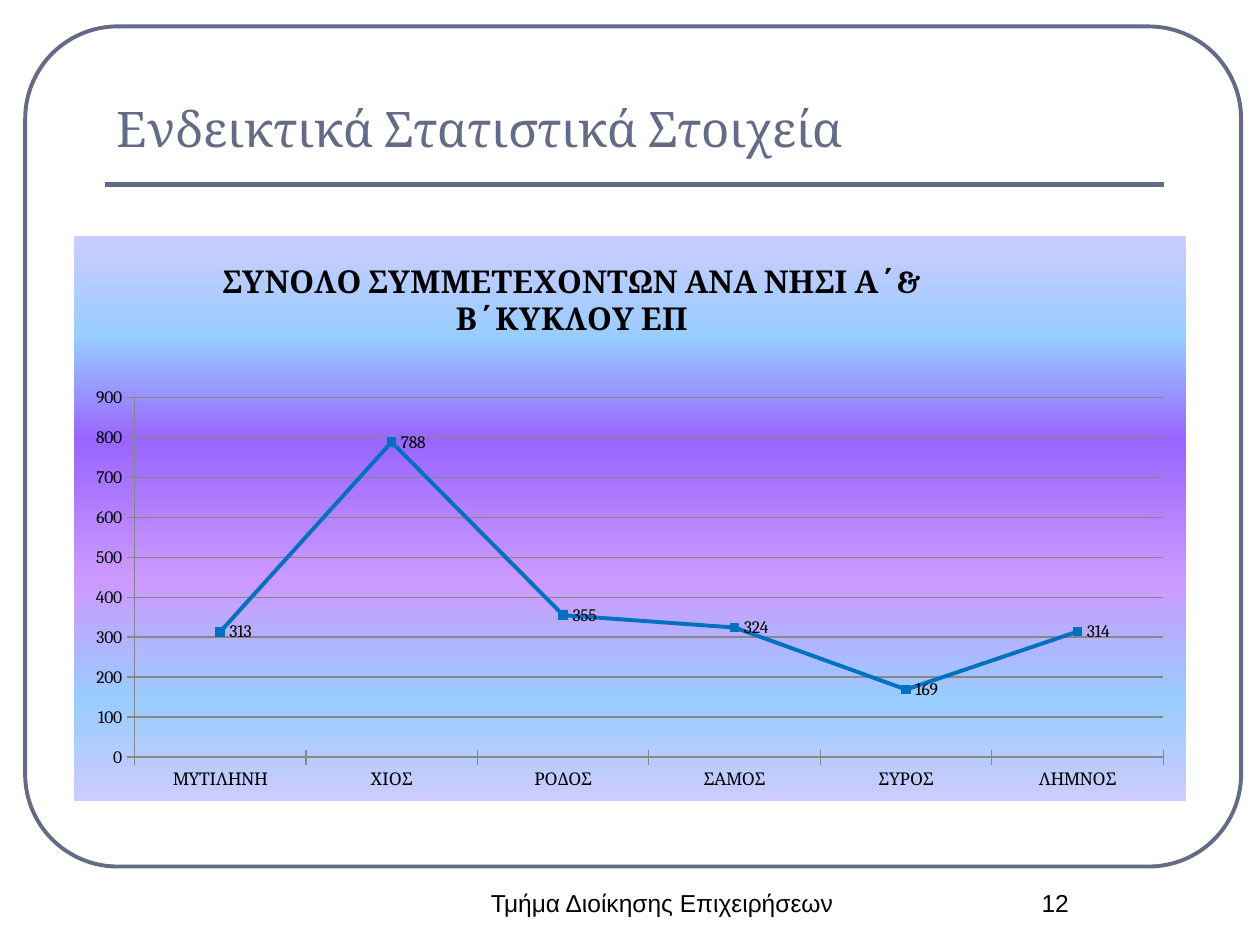
from dataclasses import dataclass

from pptx import Presentation
from pptx.chart.data import CategoryChartData
from pptx.dml.color import RGBColor
from pptx.enum.chart import XL_CHART_TYPE, XL_LABEL_POSITION, XL_MARKER_STYLE, XL_TICK_MARK
from pptx.enum.shapes import MSO_CONNECTOR, MSO_SHAPE
from pptx.enum.text import MSO_ANCHOR, PP_ALIGN
from pptx.oxml import parse_xml
from pptx.oxml.ns import nsdecls, qn
from pptx.util import Inches, Pt

WIDTH = Inches(10)
HEIGHT = Inches(7.5)


@dataclass(frozen=True)
class Theme:
    accent: RGBColor = RGBColor(0x64, 0x6B, 0x86)
    text: RGBColor = RGBColor(0, 0, 0)
    series: RGBColor = RGBColor(0x00, 0x70, 0xC0)
    grid: RGBColor = RGBColor(0x87, 0x87, 0x87)
    gradient: tuple = (
        (0, "CCCCFF"), (18, "99CCFF"), (36, "9966FF"),
        (61, "CC99FF"), (82, "99CCFF"), (100, "CCCCFF"),
    )
    heading_font: str = "Cambria"
    footer_font: str = "Arial"
    heading_size: Pt = Pt(28)
    chart_title_size: Pt = Pt(18)
    footer_size: Pt = Pt(14)
    chart_size: Pt = Pt(10)


THEME = Theme()
ISLANDS = {
    "ΜΥΤΙΛΗΝΗ": 313, "ΧΙΟΣ": 788, "ΡΟΔΟΣ": 355,
    "ΣΑΜΟΣ": 324, "ΣΥΡΟΣ": 169, "ΛΗΜΝΟΣ": 314,
}
CHART_TITLE = ("ΣΥΝΟΛΟ ΣΥΜΜΕΤΕΧΟΝΤΩΝ ΑΝΑ ΝΗΣΙ Α΄&", "Β΄ΚΥΚΛΟΥ ΕΠ")


def share_box(left, top, width, height):
    return (
        round(WIDTH * left / 100), round(HEIGHT * top / 100),
        round(WIDTH * width / 100), round(HEIGHT * height / 100),
    )


def style_font(font, name, size, color, bold=False):
    font.name = name
    font.size = size
    font.bold = bold
    font.color.rgb = color


def add_text(slide, box, text, name, size, color, alignment, anchor):
    frame = slide.shapes.add_textbox(*box).text_frame
    frame.word_wrap = True
    frame.vertical_anchor = anchor
    paragraph = frame.paragraphs[0]
    paragraph.alignment = alignment
    run = paragraph.add_run()
    run.text = text
    style_font(run.font, name, size, color)


def add_frame(slide, box):
    shape = slide.shapes.add_shape(MSO_SHAPE.ROUNDED_RECTANGLE, *box)
    shape.adjustments[0] = 0.11
    shape.shadow.inherit = False
    shape.fill.background()
    shape.line.color.rgb = THEME.accent
    shape.line.width = Pt(2.25)


def add_heading(slide, box, text):
    left, top, width, height = box
    rule_top = top + round(height * 1.18)
    rule = slide.shapes.add_connector(
        MSO_CONNECTOR.STRAIGHT, left, rule_top, left + width, rule_top
    )
    rule.line.color.rgb = THEME.accent
    rule.line.width = Pt(3)
    rule.element.spPr.append(parse_xml(f"<a:effectLst {nsdecls('a')}/>"))
    add_text(slide, box, text, THEME.heading_font, THEME.heading_size,
             THEME.accent, PP_ALIGN.LEFT, MSO_ANCHOR.BOTTOM)


def add_footer(slide, box, text):
    add_text(slide, box, text, THEME.footer_font, THEME.footer_size,
             THEME.text, PP_ALIGN.CENTER, MSO_ANCHOR.TOP)


def set_layout(parent, index, target="", **shares):
    for layout in parent.findall(qn("c:layout")):
        parent.remove(layout)
    modes = "".join(f'<c:{key}Mode val="edge"/>' for key in ("x", "y"))
    values = "".join(f'<c:{key} val="{value}"/>' for key, value in shares.items())
    parent.insert(index, parse_xml(
        f"<c:layout {nsdecls('c')}><c:manualLayout>{target}{modes}{values}"
        "</c:manualLayout></c:layout>"
    ))


def fill_chart(chart):
    stops = "".join(
        f'<a:gs pos="{position * 1000}"><a:srgbClr val="{color}"/></a:gs>'
        for position, color in THEME.gradient
    )
    chart.element.find(qn("c:chart")).addnext(parse_xml(
        f"<c:spPr {nsdecls('c', 'a')}><a:gradFill><a:gsLst>{stops}</a:gsLst>"
        '<a:lin ang="5400000" scaled="0"/></a:gradFill>'
        "<a:ln><a:noFill/></a:ln></c:spPr>"
    ))


def add_chart_title(chart):
    frame = chart.chart_title.text_frame
    for index, text in enumerate(CHART_TITLE):
        paragraph = frame.add_paragraph() if index else frame.paragraphs[0]
        run = paragraph.add_run()
        run.text = text
        style_font(run.font, THEME.heading_font, THEME.chart_title_size, THEME.text, True)
    set_layout(chart.chart_title.element, 1, x=0.13, y=0.04)


def style_axes(chart):
    for axis in (chart.category_axis, chart.value_axis):
        axis.major_tick_mark = XL_TICK_MARK.CROSS
        axis.minor_tick_mark = XL_TICK_MARK.NONE
        axis.format.line.color.rgb = THEME.grid
        axis.format.line.width = Pt(0.75)
    chart.category_axis.has_major_gridlines = False
    value_axis = chart.value_axis
    value_axis.minimum_scale = 0
    value_axis.maximum_scale = 900
    value_axis.major_unit = 100
    value_axis.has_major_gridlines = True
    value_axis.major_gridlines.format.line.color.rgb = THEME.grid
    value_axis.major_gridlines.format.line.width = Pt(0.75)


def style_series(plot):
    plot.vary_by_categories = False
    series = plot.series[0]
    series.smooth = False
    series.format.line.color.rgb = THEME.series
    series.format.line.width = Pt(2.25)
    marker = series.marker
    marker.style = XL_MARKER_STYLE.SQUARE
    marker.size = 5
    marker.format.fill.solid()
    marker.format.fill.fore_color.rgb = THEME.series
    marker.format.line.color.rgb = THEME.series
    labels = series.data_labels
    labels.show_value = True
    labels.position = XL_LABEL_POSITION.RIGHT
    style_font(labels.font, THEME.heading_font, THEME.chart_size, THEME.text)


def add_island_chart(slide, box):
    data = CategoryChartData()
    data.categories = list(ISLANDS)
    data.add_series("Series 1", list(ISLANDS.values()))
    chart = slide.shapes.add_chart(XL_CHART_TYPE.LINE_MARKERS_STACKED, *box, data).chart
    chart.has_legend = False
    style_font(chart.font, THEME.heading_font, THEME.chart_size, THEME.text)
    fill_chart(chart)
    add_chart_title(chart)
    style_axes(chart)
    style_series(chart.plots[0])
    plot_area = chart.element.find(qn("c:chart")).find(qn("c:plotArea"))
    set_layout(plot_area, 0, '<c:layoutTarget val="inner"/>',
               x=0.054, y=0.286, w=0.926, h=0.636)


def main():
    presentation = Presentation()
    presentation.slide_width = WIDTH
    presentation.slide_height = HEIGHT
    slide = presentation.slides.add_slide(presentation.slide_layouts[6])
    add_frame(slide, share_box(2, 2.8, 96.5, 88.9))
    add_heading(slide, share_box(8.3, 4.8, 84.1, 12.5), "Ενδεικτικά Στατιστικά Στοιχεία")
    add_footer(slide, share_box(36.7, 93.33, 31.7, 6.67), "Τμήμα Διοίκησης Επιχειρήσεων")
    add_footer(slide, share_box(75, 93.33, 17.5, 6.67), "12")
    add_island_chart(slide, share_box(5.9, 24.93, 88.2, 59.87))
    presentation.save("out.pptx")


if __name__ == "__main__":
    main()
